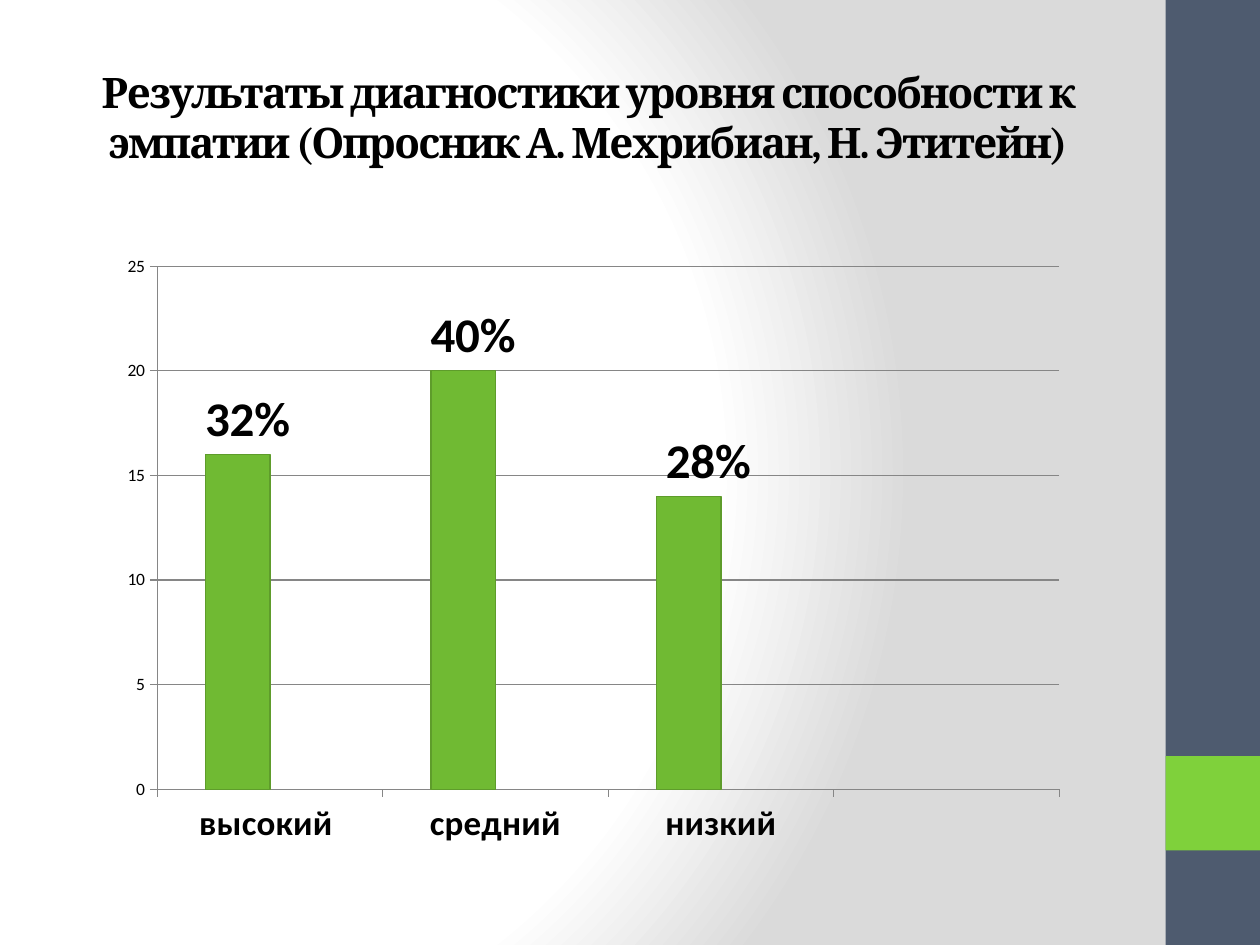
from typing import NamedTuple

from pptx import Presentation
from pptx.chart.data import CategoryChartData
from pptx.dml.color import RGBColor
from pptx.enum.chart import XL_CHART_TYPE, XL_LABEL_POSITION, XL_TICK_MARK
from pptx.enum.shapes import MSO_SHAPE
from pptx.enum.text import MSO_ANCHOR, PP_ALIGN
from pptx.oxml import parse_xml
from pptx.oxml.ns import nsdecls
from pptx.util import Inches, Pt

COLUMNS = XL_CHART_TYPE.COLUMN_CLUSTERED
OUTSIDE_END = XL_LABEL_POSITION.OUTSIDE_END
TICK_OUT, TICK_NONE = XL_TICK_MARK.OUTSIDE, XL_TICK_MARK.NONE
RECT = MSO_SHAPE.RECTANGLE
MIDDLE, CENTER = MSO_ANCHOR.MIDDLE, PP_ALIGN.CENTER

BLACK, GRID = "000000", "868686"
TITLE = "Результаты диагностики уровня способности к эмпатии (Опросник А. Мехрибиан, Н. Этитейн)"


class Band(NamedTuple):
    top: float
    height: float
    color: str


class Level(NamedTuple):
    name: str
    count: int | None
    label: str
    shift: float  # label offset to the right, as a share of chart width


BANDS = [Band(0, 7.5, "4E5B6F"), Band(6, 0.75, "7FD13B")]
LEVELS = [
    Level("высокий ", 16, "32%", 0.01),
    Level("средний", 20, "40%", 0.01),
    Level("низкий", 14, "28%", 0.02),
    Level("", None, "", 0),
]


def rgb(color: str) -> RGBColor:
    return RGBColor.from_string(color)


def set_font(font, name: str, size: float, bold: bool = False) -> None:
    font.name, font.size, font.bold = name, Pt(size), bold
    font.color.rgb = rgb(BLACK)


def set_background(s) -> None:
    s.background.fill.solid()
    bg = s.element.xpath("./p:cSld/p:bg/p:bgPr")[0]
    stops = "".join(
        f'<a:gs pos="{pos * 1000}"><a:srgbClr val="{color}"/></a:gs>'
        for pos, color in [(0, "FFFFFF"), (75, "FFFFFF"), (100, "DADADA")])
    bg.replace(bg[0], parse_xml(
        f'<a:gradFill {nsdecls("a")} rotWithShape="1"><a:gsLst>{stops}</a:gsLst>'
        '<a:path path="circle"><a:fillToRect l="20000" t="50000" r="100000" b="50000"/>'
        '</a:path></a:gradFill>'))


def add_band(s, band: Band) -> None:
    sp = s.shapes.add_shape(RECT, Inches(9.25), Inches(band.top),
                            Inches(0.75), Inches(band.height))
    sp.shadow.inherit = False
    sp.fill.solid()
    sp.fill.fore_color.rgb = rgb(band.color)
    sp.line.fill.background()


def set_title(s) -> None:
    sp = s.shapes.title
    sp.left, sp.top = Inches(0.5), Inches(0.3)
    sp.width, sp.height = Inches(8.33), Inches(1.25)
    tf = sp.text_frame
    tf.text = TITLE
    tf.word_wrap, tf.vertical_anchor = True, MIDDLE
    p = tf.paragraphs[0]
    p.alignment = CENTER
    r = p.runs[0]
    set_font(r.font, "Cambria", 24, True)
    r.font._element.set("spc", "-100")


def manual_layout(target: str, **places: float):
    """Build a chart layout from x, y, w and h shares."""
    values = "".join(f'<c:{key} val="{val}"/>' for key, val in places.items())
    return parse_xml(f'<c:layout {nsdecls("c")}><c:manualLayout>{target}{values}'
                     '</c:manualLayout></c:layout>')


def label_points(series) -> None:
    for i, level in enumerate(LEVELS):
        if not level.label:
            continue
        label = series.points[i].data_label
        tf = label.text_frame
        tf.text = level.label
        set_font(tf.paragraphs[0].runs[0].font, "Calibri", 28, True)
        label.position = OUTSIDE_END
        idx = series._element.xpath(f'./c:dLbls/c:dLbl/c:idx[@val="{i}"]')[0]
        for old in idx.getparent().xpath("./c:layout"):
            idx.getparent().remove(old)
        idx.addnext(manual_layout("", x=level.shift, y=0))


def add_level_chart(s) -> None:
    data = CategoryChartData()
    data.categories = [level.name for level in LEVELS]
    data.add_series("Series 1", [level.count for level in LEVELS])
    data.add_series("Series 2", [None] * len(LEVELS))
    chart = s.shapes.add_chart(COLUMNS, Inches(0.91), Inches(1.94),
                               Inches(7.69), Inches(4.76), data).chart
    chart.has_legend = chart.has_title = False
    set_font(chart.font, "Calibri", 10)

    # Plot area and columns
    area = chart._chartSpace.xpath("./c:chart/c:plotArea")[0]
    for old in area.xpath("./c:layout"):
        area.remove(old)
    area.insert(0, manual_layout(
        '<c:layoutTarget val="inner"/><c:xMode val="edge"/><c:yMode val="edge"/>',
        x=0.044, y=0.037, w=0.931, h=0.885))
    plot = chart.plots[0]
    plot.gap_width, plot.overlap, plot.vary_by_categories = 150, 0, False
    for series, fill, line in zip(plot.series, ("70BA33", "EA157A"), ("5E9C2B", "EA157A")):
        series.format.fill.solid()
        series.format.fill.fore_color.rgb = rgb(fill)
        series.format.line.color.rgb = rgb(line)
        series.format.line.width = Pt(0.75)
    label_points(plot.series[0])

    # Axes
    cat, val = chart.category_axis, chart.value_axis
    for axis in (cat, val):
        axis.major_tick_mark, axis.minor_tick_mark = TICK_OUT, TICK_NONE
        axis.format.line.color.rgb = rgb(GRID)
    set_font(cat.tick_labels.font, "Calibri", 20, True)
    val.minimum_scale, val.maximum_scale, val.major_unit = 0, 25, 5
    val.has_major_gridlines = True
    val.major_gridlines.format.line.color.rgb = rgb(GRID)


def main() -> None:
    prs = Presentation()
    prs.slide_width, prs.slide_height = Inches(10), Inches(7.5)
    s = prs.slides.add_slide(prs.slide_layouts[5])
    set_background(s)
    for band in BANDS:
        add_band(s, band)
    set_title(s)
    add_level_chart(s)
    prs.save("out.pptx")


if __name__ == "__main__":
    main()
